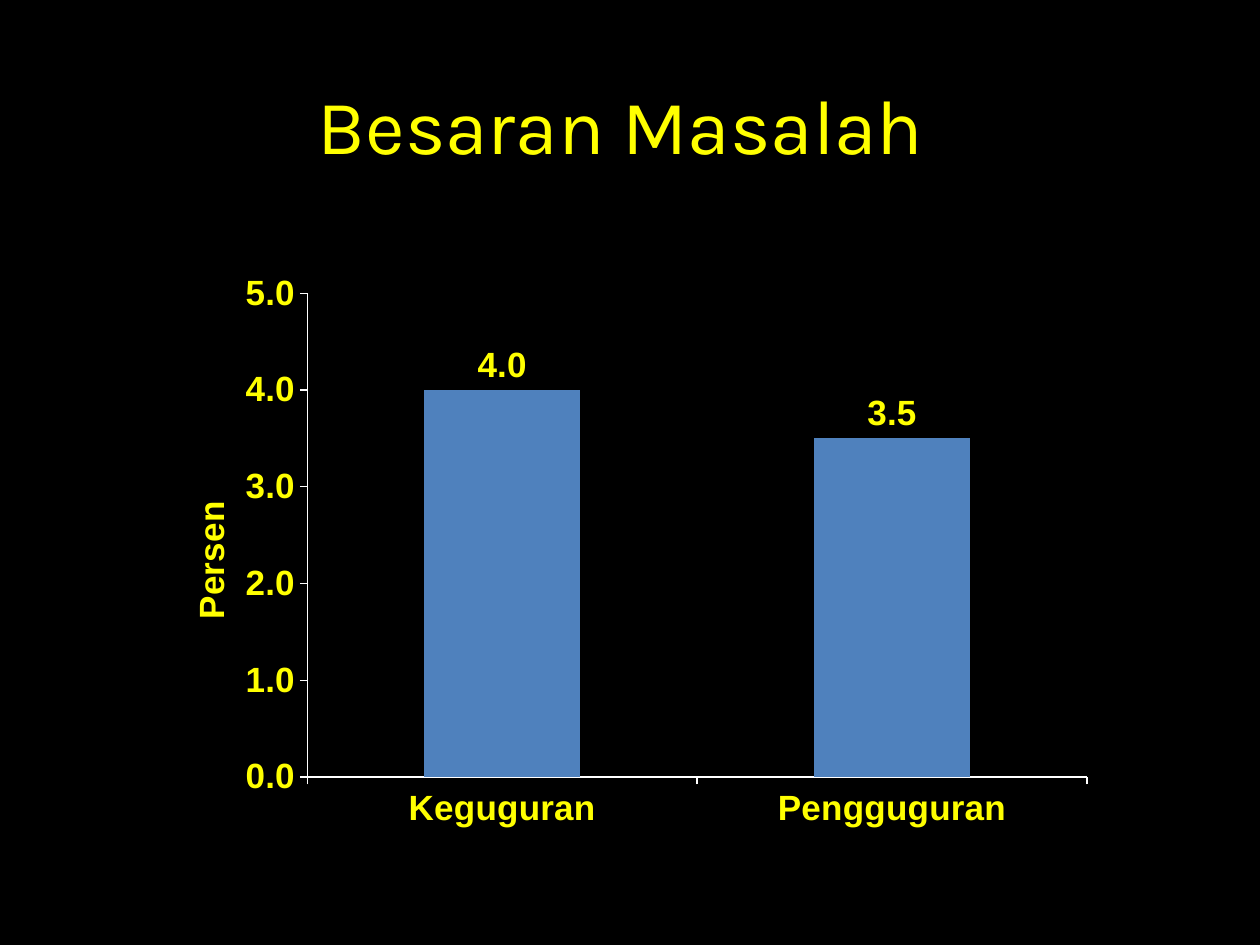
"""Build the "Besaran Masalah" slide with a column chart of percentages."""
from lxml import etree
from pptx import Presentation
from pptx import util as u
from pptx.chart.data import CategoryChartData
from pptx.dml.color import RGBColor
from pptx.enum import chart as kinds, text
from pptx.oxml.ns import qn

TITLE = "Besaran Masalah"
AXIS_TITLE = "Persen"
NUMBER_FORMAT = "0.0"
RATES = {"Keguguran": 4.0, "Pengguguran": 3.5}
COLORS = {"page": "000000", "text": "FFFF00", "bar": "4F81BD", "axis": "FFFFFF"}
TITLE_AREA = (0.43, 0.36, 9, 1.25)
CHART_AREA = (1.14, 2.1, 7.64, 4.57)
PLOT_LAYOUT = {"layoutTarget": "inner", "xMode": "edge", "yMode": "edge",
               "x": 0.17, "y": 0.05, "w": 0.81, "h": 0.84}
AXIS_TITLE_LAYOUT = {"xMode": "edge", "yMode": "edge", "x": 0.04, "y": 0.4}
TITLE_FONT = {"name": "Karla", "size": u.Pt(44), "bold": False}
CHART_FONT = {"name": "Arial", "size": u.Pt(20), "bold": True}
VALUE_SCALE = {"minimum_scale": 0, "maximum_scale": 5, "major_unit": 1}


def set_values(target, values):
    for name, value in values.items():
        setattr(target, name, value)


def paint(color_format, color):
    color_format.rgb = RGBColor.from_string(COLORS[color])


def fill_solid(fill, color):
    fill.solid()
    paint(fill.fore_color, color)


def style_font(font, values):
    set_values(font, values)
    paint(font.color, "text")


def set_layout(element, values, before):
    for old in element.findall(qn("c:layout")):
        element.remove(old)
    layout = etree.Element(qn("c:layout"))
    manual = etree.SubElement(layout, qn("c:manualLayout"))
    for name, value in values.items():
        etree.SubElement(manual, qn(f"c:{name}")).set("val", str(value))
    element.find(qn(before)).addprevious(layout)


def add_title(page):
    box = page.shapes.title
    set_values(box, dict(zip(("left", "top", "width", "height"), map(u.Inches, TITLE_AREA))))
    box.text_frame.vertical_anchor = text.MSO_ANCHOR.MIDDLE
    para = box.text_frame.paragraphs[0]
    para.alignment = text.PP_ALIGN.CENTER
    span = para.add_run()
    span.text = TITLE
    style_font(span.font, TITLE_FONT)


def add_rate_chart(page):
    data = CategoryChartData(number_format=NUMBER_FORMAT)
    data.categories = list(RATES)
    data.add_series("Series 1", list(RATES.values()))
    chart = page.shapes.add_chart(
        kinds.XL_CHART_TYPE.COLUMN_CLUSTERED, *map(u.Inches, CHART_AREA), data).chart
    set_values(chart, {"has_legend": False, "has_title": False})
    style_font(chart.font, CHART_FONT)

    plot = chart.plots[0]
    set_values(plot, {"gap_width": 150, "vary_by_categories": False, "has_data_labels": True})
    fill_solid(plot.series[0].format.fill, "bar")
    set_values(plot.data_labels, {
        "show_value": True, "number_format": NUMBER_FORMAT, "number_format_is_linked": False,
        "position": kinds.XL_LABEL_POSITION.OUTSIDE_END})
    style_font(plot.data_labels.font, CHART_FONT)

    for axis in (chart.category_axis, chart.value_axis):
        set_values(axis, {"has_major_gridlines": False,
                          "major_tick_mark": kinds.XL_TICK_MARK.OUTSIDE,
                          "minor_tick_mark": kinds.XL_TICK_MARK.NONE})
        style_font(axis.tick_labels.font, CHART_FONT)
        fill_solid(axis.format.line.fill, "axis")
        axis.format.line.width = u.Pt(0.75)

    value_axis = chart.value_axis
    set_values(value_axis, VALUE_SCALE)
    set_values(value_axis.tick_labels,
               {"number_format": NUMBER_FORMAT, "number_format_is_linked": False})
    frame = value_axis.axis_title.text_frame
    frame.text = AXIS_TITLE
    style_font(frame.paragraphs[0].runs[0].font, CHART_FONT)
    set_layout(value_axis.axis_title._element, AXIS_TITLE_LAYOUT, "c:overlay")
    set_layout(chart._chartSpace.chart.plotArea, PLOT_LAYOUT, "c:barChart")


def main():
    deck = Presentation()
    set_values(deck, {"slide_width": u.Inches(10), "slide_height": u.Inches(7.5)})
    page = deck.slides.add_slide(deck.slide_layouts.get_by_name("Title Only"))
    fill_solid(page.background.fill, "page")
    add_title(page)
    add_rate_chart(page)
    deck.save("out.pptx")


if __name__ == "__main__":
    main()
